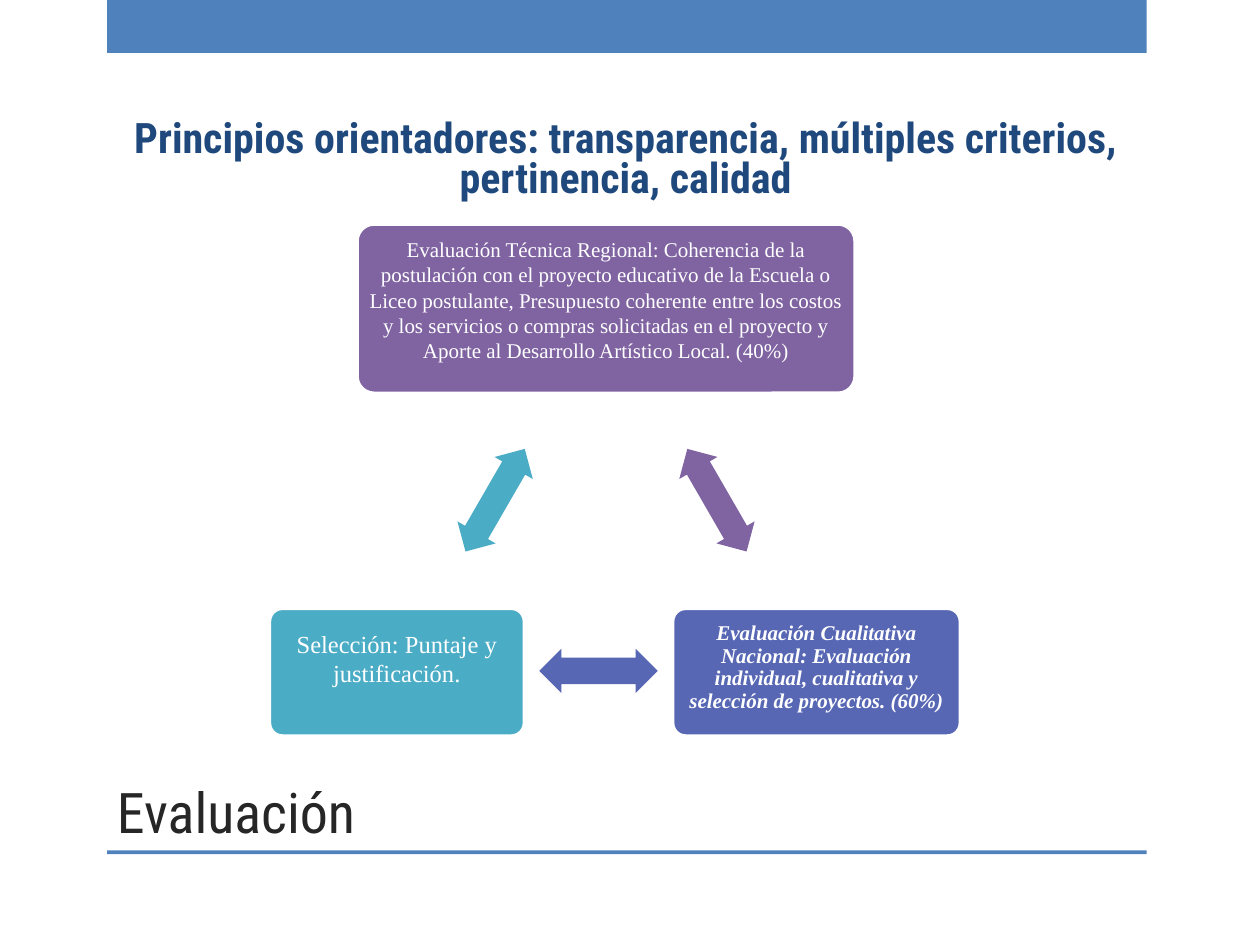
from dataclasses import dataclass

from pptx import Presentation
from pptx.dml.color import RGBColor
from pptx.enum.shapes import MSO_SHAPE
from pptx.enum.text import MSO_ANCHOR, PP_ALIGN
from pptx.util import Inches, Pt

RECTANGLE = MSO_SHAPE.RECTANGLE
ROUNDED = MSO_SHAPE.ROUNDED_RECTANGLE
DOUBLE_ARROW = MSO_SHAPE.LEFT_RIGHT_ARROW
TOP, BOTTOM = MSO_ANCHOR.TOP, MSO_ANCHOR.BOTTOM
LEFT, CENTER = PP_ALIGN.LEFT, PP_ALIGN.CENTER


@dataclass(frozen=True)
class Theme:
    bar: str = "4F81BD"
    title: str = "262626"
    heading: str = "1F497D"
    white: str = "FFFFFF"
    purple: str = "8064A2"
    indigo: str = "5767B4"
    teal: str = "4BACC6"
    title_font: str = "Roboto Condensed"
    body_font: str = "Times New Roman"
    title_size: int = 32
    heading_size: int = 24
    large_size: int = 14
    body_size: int = 12
    outline: float = 1.75


THEME = Theme()


def add_filled(slide, kind, box, color):
    shape = slide.shapes.add_shape(kind, *map(Inches, box))
    shape.shadow.inherit = False
    shape.fill.solid()
    shape.fill.fore_color.rgb = RGBColor.from_string(color)
    shape.line.fill.background()
    return shape


def set_text(shape, text, font, size, color, align=CENTER, anchor=TOP,
             margins=(0, 0), spacing=None, bold=False, italic=False):
    """Fill a shape with one paragraph; margins are (sides, top and bottom)."""
    frame = shape.text_frame
    frame.text = text
    frame.word_wrap = True
    frame.vertical_anchor = anchor
    frame.margin_left = frame.margin_right = Inches(margins[0])
    frame.margin_top = frame.margin_bottom = Inches(margins[1])
    paragraph = frame.paragraphs[0]
    paragraph.alignment = align
    if spacing:
        paragraph.line_spacing = spacing
    run_font = paragraph.runs[0].font
    run_font.name, run_font.size = font, Pt(size)
    run_font.bold, run_font.italic = bold, italic
    run_font.color.rgb = RGBColor.from_string(color)


def add_frame_bars(slide, left, width):
    for top, height in ((0, 0.42), (6.75, 0.03)):
        add_filled(slide, RECTANGLE, (left, top, width, height), THEME.bar)


def add_title(slide, box):
    title = slide.shapes.add_textbox(*map(Inches, box))
    set_text(title, "Evaluación", THEME.title_font, THEME.title_size, THEME.title,
             align=LEFT, anchor=BOTTOM, margins=(0.1, 0.05))


def add_heading(slide, box):
    heading = slide.shapes.add_textbox(*map(Inches, box))
    set_text(heading,
             "Principios orientadores: transparencia, múltiples criterios, "
             "pertinencia, calidad",
             THEME.title_font, THEME.heading_size, THEME.heading,
             margins=(0.1, 0), spacing=0.8, bold=True)


def add_stage(slide, box, color, text, size, margins, **style):
    stage = add_filled(slide, ROUNDED, box, color)
    stage.adjustments[0] = 0.1
    stage.line.color.rgb = RGBColor.from_string(THEME.white)
    stage.line.width = Pt(THEME.outline)
    set_text(stage, text, THEME.body_font, size, THEME.white, margins=margins, **style)


def add_cycle_arrow(slide, center_x, center_y, rotation, color):
    width, height = 0.94, 0.35
    box = (center_x - width / 2, center_y - height / 2, width, height)
    arrow = add_filled(slide, DOUBLE_ARROW, box, color)
    arrow.adjustments[0], arrow.adjustments[1] = 0.6, 0.5
    arrow.rotation = rotation


def add_evaluation_cycle(slide, box):
    """Three stages in a triangle, one on top and two below, joined by arrows."""
    left, top, width, height = box
    axis = left + 2.67
    lower_height = 1.01
    lower_top = top + height - lower_height
    upper_width, right_width = 3.95, 2.28

    add_stage(slide, (axis - upper_width / 2, top, upper_width, 1.34), THEME.purple,
              "Evaluación Técnica Regional: Coherencia de la postulación con el "
              "proyecto educativo de la Escuela o Liceo postulante, Presupuesto "
              "coherente entre los costos y los servicios o compras solicitadas en "
              "el proyecto y Aporte al Desarrollo Artístico Local. (40%)",
              THEME.body_size, (0.05, 0.06))
    add_stage(slide, (left + width - right_width, lower_top, right_width, lower_height),
              THEME.indigo,
              "Evaluación Cualitativa Nacional: Evaluación individual, cualitativa "
              "y selección de proyectos. (60%)",
              THEME.body_size, (0.06, 0.08), spacing=0.9, bold=True, italic=True)
    add_stage(slide, (left, lower_top, 2.02, lower_height), THEME.teal,
              "Selección: Puntaje y justificación.", THEME.large_size, (0.09, 0.13))

    arrow_offset, arrow_y = 0.88, top + 2.19
    add_cycle_arrow(slide, axis + arrow_offset, arrow_y, 60, THEME.purple)
    add_cycle_arrow(slide, axis - arrow_offset, arrow_y, 300, THEME.teal)
    add_cycle_arrow(slide, left + 2.61, lower_top + lower_height / 2 - 0.01, 180,
                    THEME.indigo)


def main():
    presentation = Presentation()
    presentation.slide_width, presentation.slide_height = Inches(10), Inches(7.5)
    slide = presentation.slides.add_slide(presentation.slide_layouts[6])
    add_frame_bars(slide, 0.85, 8.25)
    add_title(slide, (0.83, 5.95, 7.42, 0.8))
    add_heading(slide, (0.67, 0.96, 8.59, 0.7))
    add_evaluation_cycle(slide, (2.14, 1.78, 5.48, 4.06))
    presentation.save("out.pptx")


if __name__ == "__main__":
    main()
